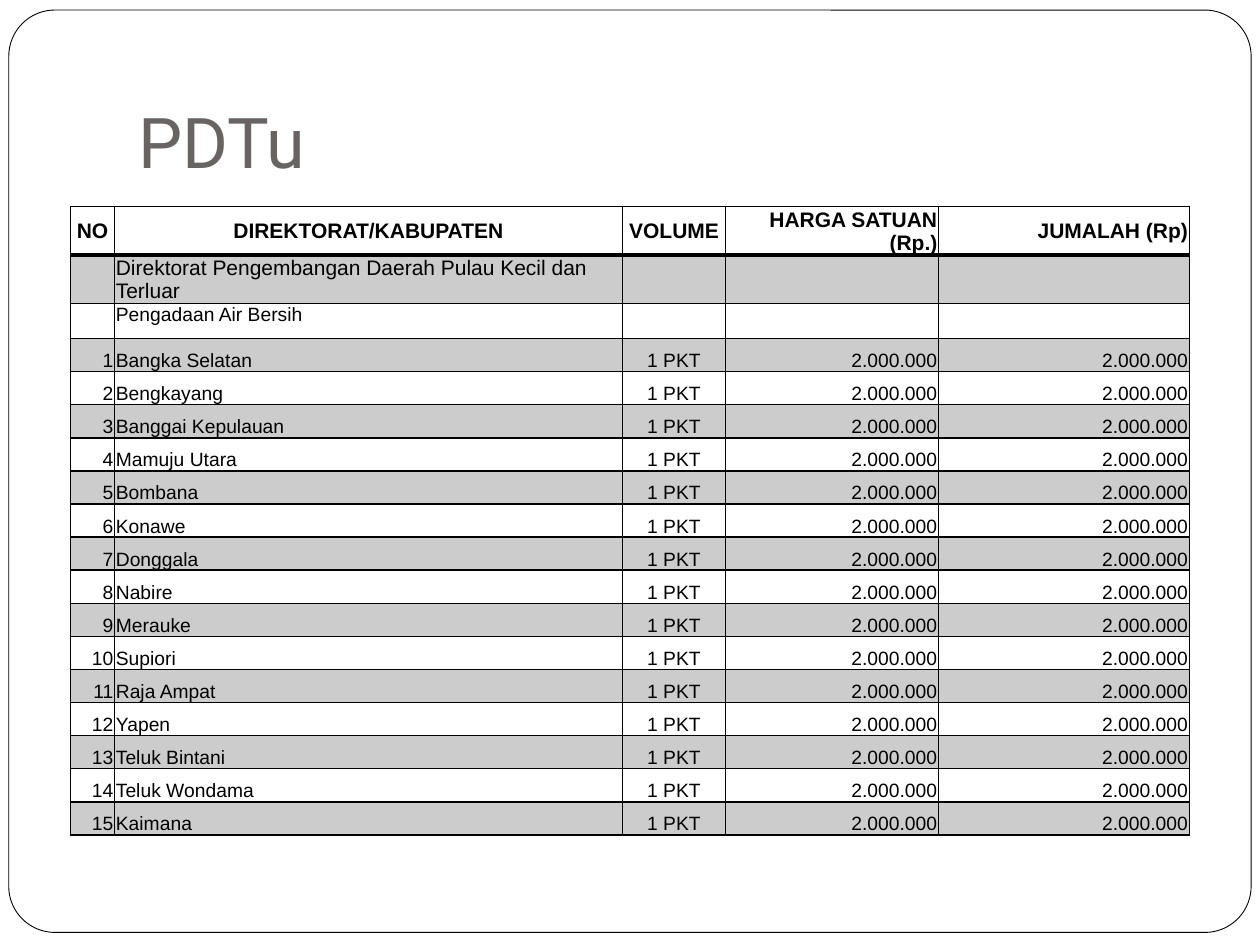
from dataclasses import dataclass

from lxml import etree
from pptx import Presentation
from pptx.dml.color import RGBColor
from pptx.enum.shapes import MSO_SHAPE
from pptx.enum.text import MSO_ANCHOR, MSO_AUTO_SIZE, PP_ALIGN
from pptx.oxml.ns import qn
from pptx.util import Inches, Pt

ROUNDED = MSO_SHAPE.ROUNDED_RECTANGLE
NO_FIT = MSO_AUTO_SIZE.NONE
TOP, MIDDLE, BOTTOM = MSO_ANCHOR.TOP, MSO_ANCHOR.MIDDLE, MSO_ANCHOR.BOTTOM
LEFT, CENTER, RIGHT = PP_ALIGN.LEFT, PP_ALIGN.CENTER, PP_ALIGN.RIGHT


@dataclass(frozen=True)
class Theme:
    """Colours, fonts and type sizes of the slide."""

    paper: str = "FFFFFF"
    ink: str = "000000"
    title_color: str = "696464"
    title_font: str = "Roboto"
    table_font: str = "Arial"
    title_size: int = 40
    heading_size: int = 12
    body_size: int = 11
    band_opacity: int = 20
    frame_line: float = 0.5
    rule: int = 1
    header_rule: int = 2


THEME = Theme()
SLIDE_WIDTH, SLIDE_HEIGHT = 10, 7.5
TABLE_LEFT, TABLE_TOP, TABLE_HEIGHT = 0.56, 1.64, 4.77
COLUMN_WIDTHS = [0.35, 4.03, 0.82, 1.69, 1.99]
LEADING_ROWS = [0.27, 0.28, 0.28]
HEADER = ["NO", "DIREKTORAT/KABUPATEN", "VOLUME", "HARGA SATUAN (Rp.)", "JUMALAH (Rp)"]
DIRECTORATE = "Direktorat Pengembangan Daerah Pulau Kecil dan Terluar"
PROGRAMME = "Pengadaan Air Bersih"
REGENCIES = [
    "Bangka Selatan", "Bengkayang", "Banggai Kepulauan", "Mamuju Utara", "Bombana",
    "Konawe", "Donggala", "Nabire", "Merauke", "Supiori", "Raja Ampat", "Yapen",
    "Teluk Bintani", "Teluk Wondama", "Kaimana",
]
VOLUME, PRICE = "1 PKT", "2.000.000"
HEADER_ALIGNMENT = [CENTER, CENTER, CENTER, RIGHT, RIGHT]
BODY_ALIGNMENT = [RIGHT, LEFT, CENTER, RIGHT, RIGHT]


def apply_format(target, values):
    """Set each named attribute of the target."""
    for name, value in values.items():
        setattr(target, name, value)


def format_font(font, name, size, color, bold=False):
    """Give a font its face, size, weight and colour."""
    apply_format(font, {"name": name, "size": Pt(size), "bold": bold})
    font.color.rgb = RGBColor.from_string(color)


def add_frame(slide):
    """Draw the rounded page frame behind the title."""
    shape = slide.shapes.add_shape(
        ROUNDED, Inches(0.07), Inches(0.08), Inches(9.86), Inches(7.32))
    shape.adjustments[0] = 0.05
    shape.shadow.inherit = False
    shape.fill.solid()
    shape.fill.fore_color.rgb = RGBColor.from_string(THEME.paper)
    shape.line.color.rgb = RGBColor.from_string(THEME.ink)
    shape.line.width = Pt(THEME.frame_line)
    slide.shapes.title._element.addprevious(shape._element)


def add_title(slide, text):
    """Place and format the title placeholder."""
    title = slide.shapes.title
    apply_format(title, {"left": Inches(1), "top": Inches(0.3),
                         "width": Inches(8.5), "height": Inches(1.25)})
    apply_format(title.text_frame, {
        "text": text, "word_wrap": True, "auto_size": NO_FIT, "vertical_anchor": BOTTOM,
        "margin_left": Inches(0.1), "margin_right": Inches(0.1),
        "margin_top": Inches(0.05), "margin_bottom": Inches(0.1)})
    paragraph = title.text_frame.paragraphs[0]
    paragraph.alignment = LEFT
    format_font(paragraph.runs[0].font, THEME.title_font, THEME.title_size, THEME.title_color)


def set_borders(cell, widths):
    """Rule the cell's sides with the given widths in points."""
    properties = cell._tc.get_or_add_tcPr()
    for side, width in widths.items():
        line = etree.SubElement(properties, qn(f"a:ln{side}"), w=str(Pt(width)))
        fill = etree.SubElement(line, qn("a:solidFill"))
        etree.SubElement(fill, qn("a:srgbClr"), val=THEME.ink)


def set_band(cell, banded):
    """Fill a banded cell with translucent ink and clear any other."""
    if not banded:
        cell.fill.background()
        return
    cell.fill.solid()
    cell.fill.fore_color.rgb = RGBColor.from_string(THEME.ink)
    color = cell._tc.tcPr.find(f"{qn('a:solidFill')}/{qn('a:srgbClr')}")
    etree.SubElement(color, qn("a:alpha"), val=str(THEME.band_opacity * 1000))


def write_cell(cell, text, alignment, anchor, size, bold):
    """Write and format the text of one cell."""
    apply_format(cell, {
        "vertical_anchor": anchor, "margin_left": Inches(0.01),
        "margin_right": Inches(0.01), "margin_top": Inches(0.01), "margin_bottom": 0})
    paragraph = cell.text_frame.paragraphs[0]
    paragraph.alignment = alignment
    if text:
        run = paragraph.add_run()
        run.text = text
        format_font(run.font, THEME.table_font, size, THEME.ink, bold)
    else:
        etree.SubElement(paragraph._p, qn("a:endParaRPr"), sz=str(size * 100))


def row_format(index):
    """Return the alignments, anchor, size and weight of a row."""
    if index == 0:
        return HEADER_ALIGNMENT, MIDDLE, THEME.heading_size, True
    if index == 1:
        return BODY_ALIGNMENT, MIDDLE, THEME.heading_size, False
    return BODY_ALIGNMENT, TOP if index == 2 else BOTTOM, THEME.body_size, False


def add_budget_table(slide):
    """Build the ruled and banded table of regencies."""
    rows = [HEADER, ["", DIRECTORATE, "", "", ""], ["", PROGRAMME, "", "", ""]]
    rows += [[str(number), name, VOLUME, PRICE, PRICE]
             for number, name in enumerate(REGENCIES, 1)]
    regency_height = (TABLE_HEIGHT - sum(LEADING_ROWS)) / len(REGENCIES)
    heights = LEADING_ROWS + [regency_height] * len(REGENCIES)
    table = slide.shapes.add_table(
        len(rows), len(HEADER), Inches(TABLE_LEFT), Inches(TABLE_TOP),
        Inches(sum(COLUMN_WIDTHS)), Inches(TABLE_HEIGHT)).table
    apply_format(table, {"first_row": False, "horz_banding": False})
    for column, width in zip(table.columns, COLUMN_WIDTHS):
        column.width = Inches(width)
    for index, (texts, height) in enumerate(zip(rows, heights)):
        table.rows[index].height = Inches(height)
        alignments, anchor, size, bold = row_format(index)
        borders = {"L": THEME.rule, "R": THEME.rule,
                   "T": THEME.header_rule if index == 1 else THEME.rule,
                   "B": THEME.header_rule if index == 0 else THEME.rule}
        for cell, text, alignment in zip(table.rows[index].cells, texts, alignments):
            write_cell(cell, text, alignment, anchor, size, bold)
            set_borders(cell, borders)
            set_band(cell, index % 2 == 1)


def main():
    """Build the slide and save it."""
    presentation = Presentation()
    apply_format(presentation, {"slide_width": Inches(SLIDE_WIDTH),
                                "slide_height": Inches(SLIDE_HEIGHT)})
    slide = presentation.slides.add_slide(presentation.slide_layouts[5])
    add_frame(slide)
    add_title(slide, "PDTu")
    add_budget_table(slide)
    presentation.save("out.pptx")


if __name__ == "__main__":
    main()
